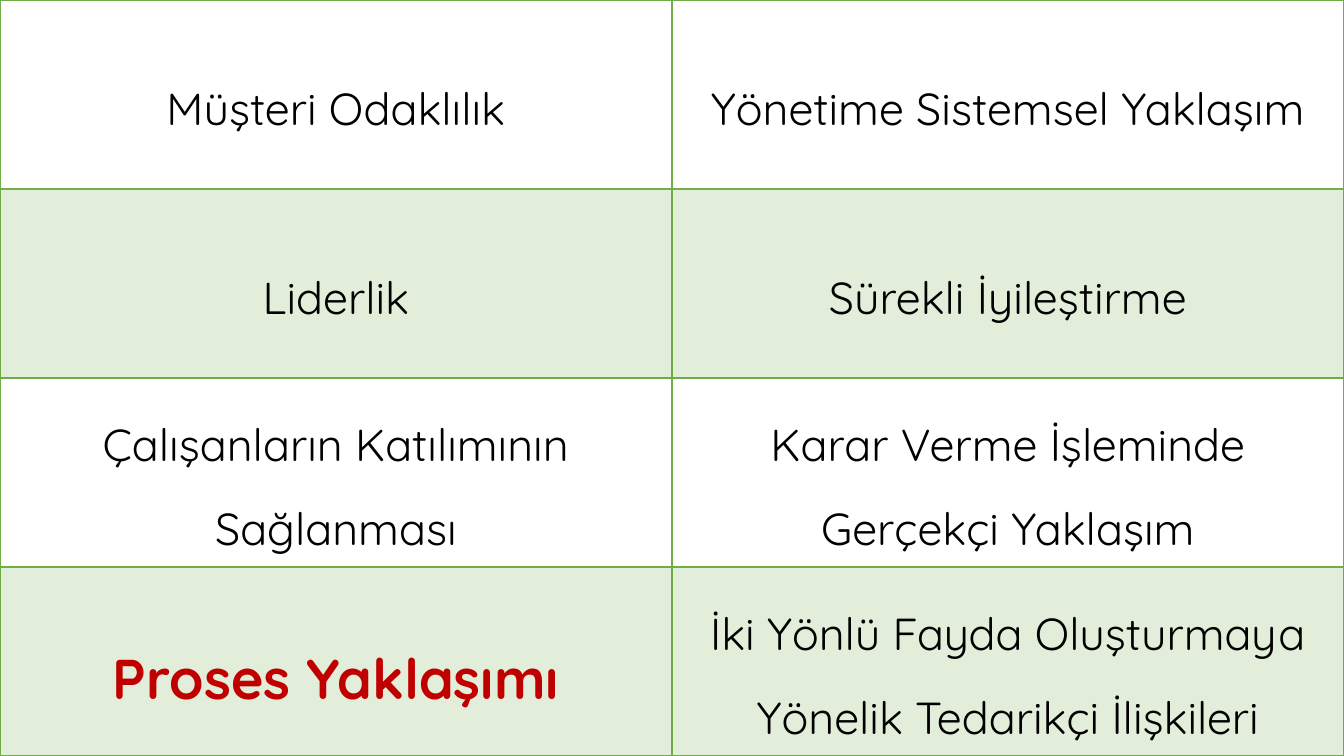
from dataclasses import dataclass

import lxml.etree
import pptx
import pptx.dml.color
import pptx.enum.text
import pptx.oxml.ns
import pptx.table
import pptx.util


# Theme
@dataclass(frozen=True)
class Theme:
    font: str = "Quicksand"
    text: str = "000000"
    accent: str = "C00000"
    green: str = "70AD47"
    band_opacity: int = 20
    text_size: int = 32
    accent_size: int = 40
    line_spacing: float = 1.5
    border: float = 1
    header_border: float = 2


@dataclass(frozen=True)
class Principle:
    text: str
    highlighted: bool = False


THEME = Theme()
WIDTH = pptx.util.Inches(13.33)
HEIGHT = pptx.util.Inches(7.5)

# Content
PRINCIPLE_ROWS: list[tuple[Principle, Principle]] = [
    (Principle("Müşteri Odaklılık"), Principle("Yönetime Sistemsel Yaklaşım")),
    (Principle("Liderlik"), Principle("Sürekli İyileştirme")),
    (
        Principle("Çalışanların Katılımının Sağlanması"),
        Principle("Karar Verme İşleminde Gerçekçi Yaklaşım"),
    ),
    (
        Principle("Proses Yaklaşımı", highlighted=True),
        Principle("İki Yönlü Fayda Oluşturmaya Yönelik Tedarikçi İlişkileri"),
    ),
]


def set_borders(cell: pptx.table._Cell, bottom: float) -> None:
    """Outline a cell; border elements must precede its fill."""
    properties = cell._tc.get_or_add_tcPr()
    qn = pptx.oxml.ns.qn
    widths = {"L": THEME.border, "R": THEME.border, "T": THEME.border, "B": bottom}
    for position, (side, width) in enumerate(widths.items()):
        line = lxml.etree.Element(qn(f"a:ln{side}"), w=str(pptx.util.Pt(width)))
        solid = lxml.etree.SubElement(line, qn("a:solidFill"))
        lxml.etree.SubElement(solid, qn("a:srgbClr"), val=THEME.green)
        properties.insert(position, line)


def set_fill(cell: pptx.table._Cell, banded: bool) -> None:
    """Tint banded cells and leave the others clear."""
    if not banded:
        cell.fill.background()
        return
    cell.fill.solid()
    cell.fill.fore_color.rgb = pptx.dml.color.RGBColor.from_string(THEME.green)
    color = cell._tc.tcPr.find(
        f"{pptx.oxml.ns.qn('a:solidFill')}/{pptx.oxml.ns.qn('a:srgbClr')}"
    )
    opacity = str(THEME.band_opacity * 1000)
    lxml.etree.SubElement(color, pptx.oxml.ns.qn("a:alpha"), val=opacity)


def write_principle(cell: pptx.table._Cell, principle: Principle) -> None:
    """Write one principle centred in its cell."""
    cell.text_frame.text = principle.text
    cell.vertical_anchor = pptx.enum.text.MSO_ANCHOR.MIDDLE
    paragraph = cell.text_frame.paragraphs[0]
    paragraph.alignment = pptx.enum.text.PP_ALIGN.CENTER
    paragraph.line_spacing = THEME.line_spacing
    highlighted = principle.highlighted
    font = paragraph.runs[0].font
    font.name = THEME.font
    font.size = pptx.util.Pt(THEME.accent_size if highlighted else THEME.text_size)
    font.bold = highlighted
    font.color.rgb = pptx.dml.color.RGBColor.from_string(
        THEME.accent if highlighted else THEME.text
    )


def main() -> None:
    presentation = pptx.Presentation()
    presentation.slide_width = WIDTH
    presentation.slide_height = HEIGHT
    slide = presentation.slides.add_slide(presentation.slide_layouts[6])

    # Table filling the whole slide
    table = slide.shapes.add_table(
        len(PRINCIPLE_ROWS), len(PRINCIPLE_ROWS[0]), 0, 0, WIDTH, HEIGHT
    ).table
    table.first_row = False
    table.horz_banding = False

    # Cells, with every second row tinted
    for row_index, principles in enumerate(PRINCIPLE_ROWS):
        bottom = THEME.header_border if row_index == 0 else THEME.border
        for column_index, principle in enumerate(principles):
            cell = table.cell(row_index, column_index)
            write_principle(cell, principle)
            set_fill(cell, banded=row_index % 2 == 1)
            set_borders(cell, bottom)

    presentation.save("out.pptx")


if __name__ == "__main__":
    main()
